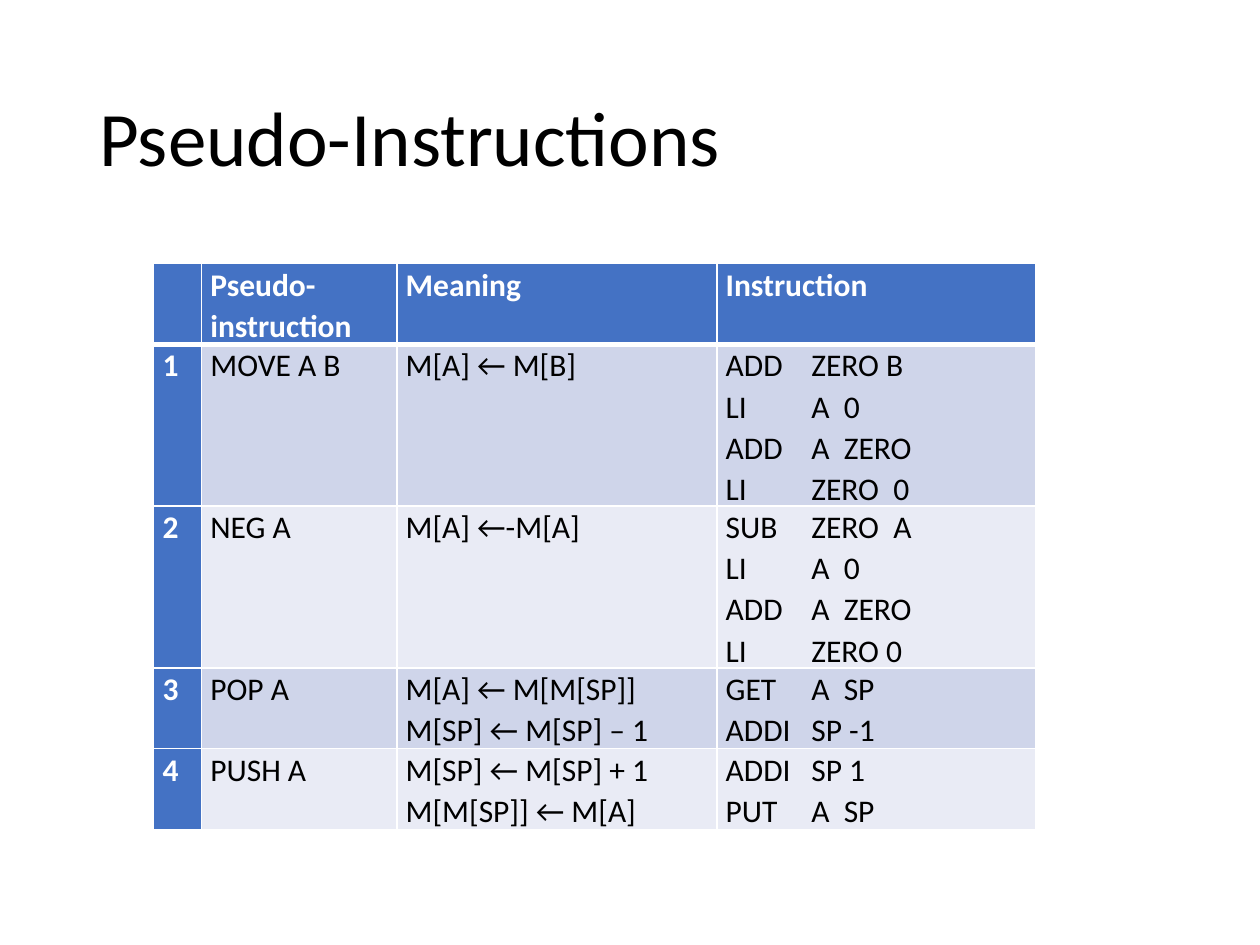
from dataclasses import dataclass

from lxml import etree
from pptx import Presentation
from pptx.dml.color import RGBColor
from pptx.enum.text import MSO_ANCHOR
from pptx.oxml.ns import qn
from pptx.util import Inches, Pt

MIDDLE = MSO_ANCHOR.MIDDLE
BLANK_LAYOUT = 6


@dataclass(frozen=True)
class Theme:
    font: str = "Calibri"
    title_size: int = 44
    body_size: int = 18
    ink: str = "000000"
    paper: str = "FFFFFF"
    accent: str = "4472C4"
    bands: tuple = ("CFD5EA", "E9EBF5")
    thin_border: int = 1
    thick_border: int = 3
    title_spacing: float = 0.9
    body_spacing: float = 1.07
    line_height: float = 0.32
    cell_inset: float = 0.07
    operand_tab: float = 0.68


HEADINGS = ("", "Pseudo-instruction", "Meaning", "Instruction")
INSTRUCTIONS = (
    ("MOVE A B", ("M[A] ← M[B]",),
     ("ADD\tZERO B", "LI\tA  0", "ADD\tA  ZERO", "LI\tZERO  0")),
    ("NEG A", ("M[A] ←-M[A]",),
     ("SUB\tZERO  A", "LI\tA  0", "ADD\tA  ZERO", "LI\tZERO 0")),
    ("POP A", ("M[A] ← M[M[SP]]", "M[SP] ← M[SP] – 1"),
     ("GET\tA  SP", "ADDI\tSP -1")),
    ("PUSH A", ("M[SP] ← M[SP] + 1", "M[M[SP]] ← M[A]"),
     ("ADDI\tSP 1", "PUT\tA  SP")),
)
COLUMN_WIDTHS = (0.38, 1.55, 2.54, 2.53)


class SlideBuilder:
    """Draws styled elements on one page."""

    def __init__(self, page, theme):
        self.page = page
        self.theme = theme

    def add_text(self, para, text, size, color, spacing, bold=False):
        para.line_spacing = spacing
        if "\t" in text:
            tabs = etree.SubElement(para._p.get_or_add_pPr(), qn("a:tabLst"))
            etree.SubElement(tabs, qn("a:tab"), algn="l",
                             pos=str(Inches(self.theme.operand_tab)))
        span = para.add_run()
        span.text = text
        span.font.name = self.theme.font
        span.font.size = Pt(size)
        span.font.bold = bold
        span.font.color.rgb = RGBColor.from_string(color)

    def title(self, text, left, top, width, height):
        box = self.page.shapes.add_textbox(
            Inches(left), Inches(top), Inches(width), Inches(height))
        frame = box.text_frame
        frame.word_wrap = True
        frame.vertical_anchor = MIDDLE
        self.add_text(frame.paragraphs[0], text, self.theme.title_size,
                      self.theme.ink, self.theme.title_spacing)

    def borders(self, cell, top, bottom):
        thin = self.theme.thin_border
        sides = {"lnL": thin, "lnR": thin, "lnT": top, "lnB": bottom}
        for side, width in sides.items():
            line = etree.SubElement(cell._tc.get_or_add_tcPr(), qn(f"a:{side}"),
                                    w=str(Pt(width)))
            fill = etree.SubElement(line, qn("a:solidFill"))
            etree.SubElement(fill, qn("a:srgbClr"), val=self.theme.paper)

    def cell(self, cell, lines, row, column):
        theme = self.theme
        heading = row == 0 or column == 0
        self.borders(cell,
                     theme.thick_border if row == 1 else theme.thin_border,
                     theme.thick_border if row == 0 else theme.thin_border)
        cell.fill.solid()
        cell.fill.fore_color.rgb = RGBColor.from_string(
            theme.accent if heading else theme.bands[(row - 1) % 2])
        cell.margin_left = cell.margin_right = Inches(theme.cell_inset)
        cell.margin_top = cell.margin_bottom = 0
        frame = cell.text_frame
        for index, text in enumerate(lines):
            para = frame.add_paragraph() if index else frame.paragraphs[0]
            if text:
                self.add_text(para, text, theme.body_size,
                              theme.paper if heading else theme.ink,
                              theme.body_spacing, heading)

    def table(self, rows, line_counts, widths, left, top):
        heights = [count * self.theme.line_height for count in line_counts]
        table = self.page.shapes.add_table(
            len(rows), len(widths), Inches(left), Inches(top),
            Inches(sum(widths)), Inches(sum(heights))).table
        for column, width in zip(table.columns, widths):
            column.width = Inches(width)
        for row, (cells, height) in enumerate(zip(rows, heights)):
            table.rows[row].height = Inches(height)
            for column, lines in enumerate(cells):
                self.cell(table.cell(row, column), lines, row, column)


def main():
    deck = Presentation()
    deck.slide_width = Inches(10)
    deck.slide_height = Inches(7.5)
    page = deck.slides.add_slide(deck.slide_layouts[BLANK_LAYOUT])
    builder = SlideBuilder(page, Theme())

    builder.title("Pseudo-Instructions", 0.69, 0.4, 8.62, 1.45)
    rows = [[(heading,) for heading in HEADINGS]]
    for number, (name, meaning, code) in enumerate(INSTRUCTIONS, start=1):
        rows.append([(str(number),), (name,), meaning, code])
    line_counts = [2] + [len(code) for _, _, code in INSTRUCTIONS]
    builder.table(rows, line_counts, COLUMN_WIDTHS, 1.22, 2.09)

    deck.save("out.pptx")


if __name__ == "__main__":
    main()
